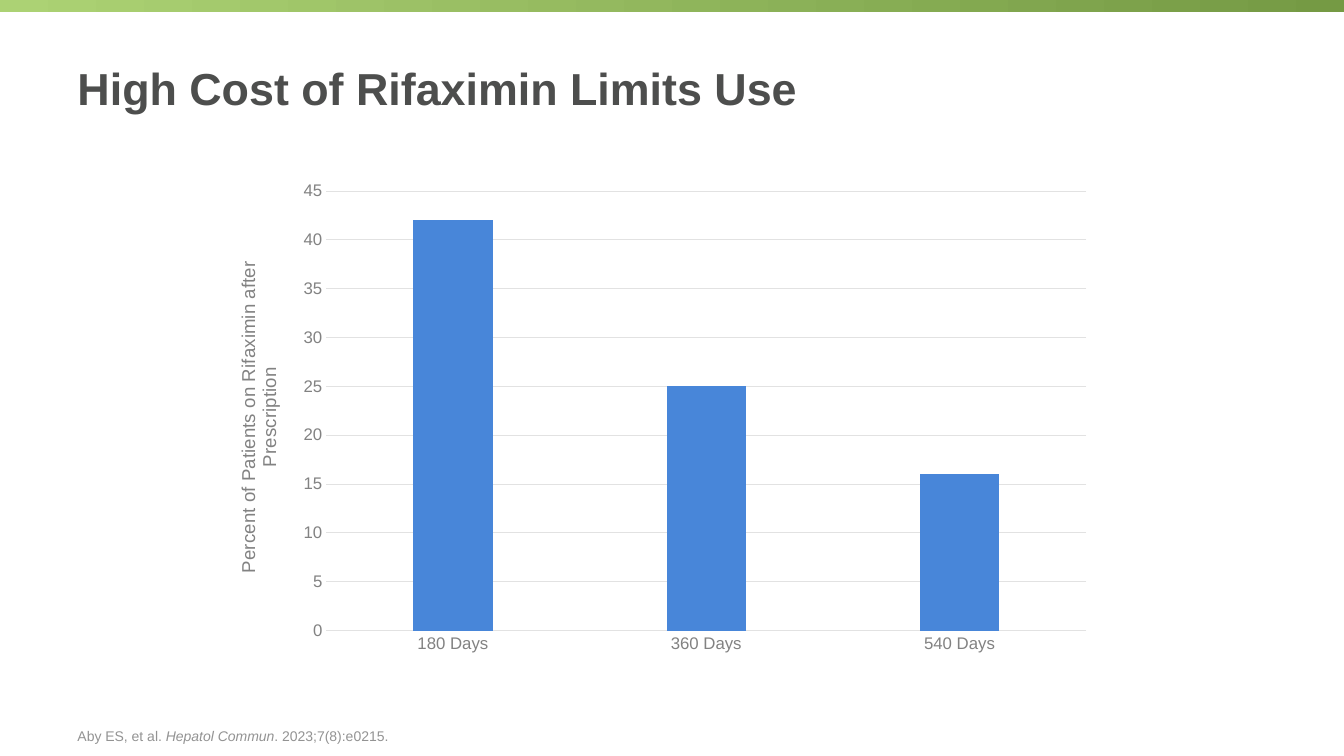
from dataclasses import dataclass

from pptx import Presentation
from pptx.chart.data import CategoryChartData
from pptx.dml.color import RGBColor
from pptx.enum import chart as charts, shapes, text
from pptx.util import Inches, Pt


@dataclass(frozen=True)
class Theme:
    font: str = "Arial"
    band_start: str = "ACD274"
    band_end: str = "759A44"
    heading: str = "4D4E4D"
    chart_text: str = "3F3F3F"
    axis_text: str = "828282"
    rule: str = "E2E2E2"
    bar: str = "4886D9"
    citation: str = "939393"
    heading_size: float = 32
    axis_title_size: float = 13.3
    axis_size: float = 12
    small_size: float = 10
    rule_width: float = 0.75


THEME = Theme()


def color(value):
    return RGBColor.from_string(value)


def style(font, size, value, bold=False, italic=False):
    font.name = THEME.font
    font.size = Pt(size)
    font.color.rgb = color(value)
    font.bold = bold
    font.italic = italic


def style_line(line):
    line.color.rgb = color(THEME.rule)
    line.width = Pt(THEME.rule_width)


def add_band(page, left, top, width, height):
    band = page.shapes.add_shape(
        shapes.MSO_SHAPE.RECTANGLE,
        Inches(left), Inches(top), Inches(width), Inches(height))
    band.shadow.inherit = False
    band.line.fill.background()
    band.fill.gradient()
    band.fill.gradient_angle = 0
    for stop, value in zip(band.fill.gradient_stops, (THEME.band_start, THEME.band_end)):
        stop.color.rgb = color(value)


def add_text(page, left, top, width, height, anchor, pieces, size, value, bold=False):
    box = page.shapes.add_textbox(
        Inches(left), Inches(top), Inches(width), Inches(height))
    frame = box.text_frame
    frame.word_wrap = True
    frame.vertical_anchor = anchor
    para = frame.paragraphs[0]
    for words, italic in pieces:
        span = para.add_run()
        span.text = words
        style(span.font, size, value, bold, italic)


def style_axis(axis):
    axis.major_tick_mark = charts.XL_TICK_MARK.NONE
    axis.minor_tick_mark = charts.XL_TICK_MARK.NONE
    style(axis.tick_labels.font, THEME.axis_size, THEME.axis_text)


def add_usage_chart(page, left, top, width, height):
    usage = CategoryChartData()
    usage.categories = ["180 Days", "360 Days", "540 Days"]
    usage.add_series("Series 1", (42, 25, 16))
    chart = page.shapes.add_chart(
        charts.XL_CHART_TYPE.COLUMN_CLUSTERED,
        Inches(left), Inches(top), Inches(width), Inches(height), usage).chart
    chart.has_legend = False
    chart.has_title = False
    style(chart.font, THEME.small_size, THEME.chart_text)

    plot = chart.plots[0]
    plot.vary_by_categories = False
    plot.gap_width = 219
    plot.overlap = -27
    bars = plot.series[0].format.fill
    bars.solid()
    bars.fore_color.rgb = color(THEME.bar)

    days = chart.category_axis
    style_axis(days)
    style_line(days.format.line)

    percent = chart.value_axis
    style_axis(percent)
    percent.minimum_scale = 0
    percent.maximum_scale = 45
    percent.major_unit = 5
    percent.format.line.fill.background()
    style_line(percent.major_gridlines.format.line)
    para = percent.axis_title.text_frame.paragraphs[0]
    para.text = "Percent of Patients on Rifaximin after Prescription"
    style(para.runs[0].font, THEME.axis_title_size, THEME.axis_text)


def build_slide(page, width):
    margin, text_width = 0.67, 11.75
    add_band(page, 0, 0, width, 0.12)
    add_text(page, margin, 0.22, text_width, 1.3, text.MSO_ANCHOR.MIDDLE,
             [("High Cost of Rifaximin Limits Use", False)],
             THEME.heading_size, THEME.heading, bold=True)
    add_usage_chart(page, 2.13, 1.71, 8.82, 4.86)
    add_text(page, margin, 6.95, text_width, 0.48, text.MSO_ANCHOR.BOTTOM,
             [("Aby ES, et al. ", False), ("Hepatol Commun", True),
              (". 2023;7(8):e0215.", False)],
             THEME.small_size, THEME.citation)


def main():
    width, height = 13.33, 7.5
    deck = Presentation()
    deck.slide_width = Inches(width)
    deck.slide_height = Inches(height)
    page = deck.slides.add_slide(deck.slide_layouts[6])
    build_slide(page, width)
    deck.save("out.pptx")


if __name__ == "__main__":
    main()
